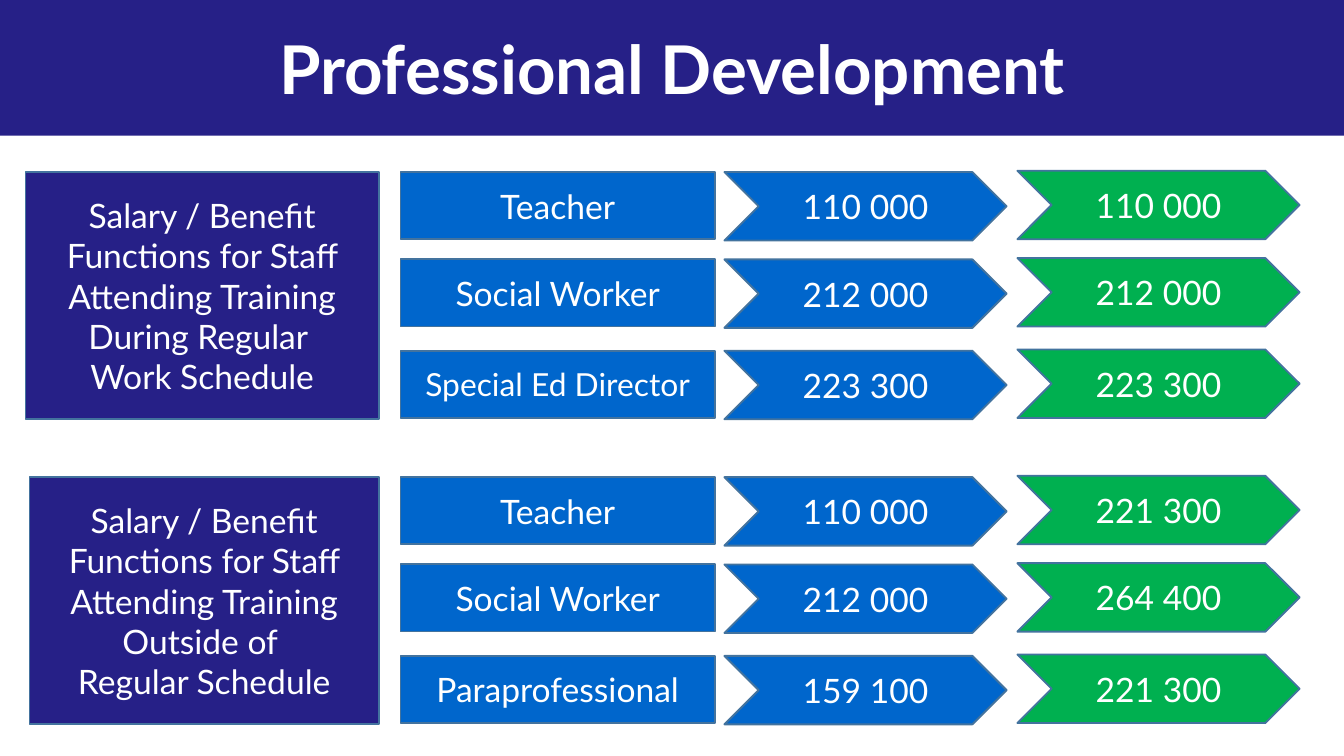
from pptx import Presentation
from pptx.dml.color import RGBColor
from pptx.enum.shapes import MSO_SHAPE
from pptx.enum.text import MSO_ANCHOR, MSO_AUTO_SIZE, PP_ALIGN
from pptx.util import Inches, Pt

RECT, CHEVRON = MSO_SHAPE.RECTANGLE, MSO_SHAPE.CHEVRON
MIDDLE, CENTER = MSO_ANCHOR.MIDDLE, PP_ALIGN.CENTER
NO_FIT = MSO_AUTO_SIZE.NONE

FONT = "Lato"
NAVY, BLUE, GREEN = "262087", "0066CC", "00B050"
WHITE, OUTLINE = "FFFFFF", "43739E"

# Grid in inches: columns, and rows within a group
ROLE_X, ROLE_W, ROLE_H = 2.98, 2.34, 0.5
CODE_X, CODE_STEP, CODE_W, CODE_H = 5.39, 2.18, 2.1, 0.51
GROUP_RIGHT, GROUP_H = 2.82, 1.84
ROW_OFFSETS = (0, 0.65, 1.33)
GREEN_LIFT = 0.01

# Group: top, left, heading, rows of (role, regular code, training code)
GROUPS = [
    (1.28, 0.19,
     "Salary / Benefit Functions for Staff Attending Training "
     "During Regular \vWork Schedule",
     [("Teacher", "110 000", "110 000"),
      ("Social Worker", "212 000", "212 000"),
      ("Special Ed Director", "223 300", "223 300")]),
    (3.55, 0.22,
     "Salary / Benefit Functions for Staff Attending Training "
     "Outside of \vRegular Schedule",
     [("Teacher", "110 000", "221 300"),
      ("Social Worker", "212 000", "264 400"),
      ("Paraprofessional", "159 100", "221 300")]),
]


def rgb(color):
    return RGBColor.from_string(color)


def fill(shape, color):
    shape.fill.solid()
    shape.fill.fore_color.rgb = rgb(color)


def write(shape, text, size, bold=False):
    tf = shape.text_frame
    tf.text = text
    tf.word_wrap = True
    tf.auto_size = NO_FIT
    tf.vertical_anchor = MIDDLE
    p = tf.paragraphs[0]
    p.alignment = CENTER
    for r in p.runs:
        r.font.name = FONT
        r.font.size = Pt(size)
        r.font.bold = bold
        r.font.color.rgb = rgb(WHITE)


def add_box(s, kind, x, y, w, h, color, text, size=18):
    box = s.shapes.add_shape(kind, Inches(x), Inches(y), Inches(w), Inches(h))
    box.shadow.inherit = False
    fill(box, color)
    box.line.color.rgb = rgb(OUTLINE)
    box.line.width = Pt(1)
    write(box, text, size)


def add_title(s, text, width):
    title = s.shapes.title
    title.left, title.top = 0, 0
    title.width, title.height = width, Inches(1.01)
    fill(title, NAVY)
    write(title, text, 36, bold=True)


def add_group(s, top, left, heading, rows):
    add_box(s, RECT, left, top, GROUP_RIGHT - left, GROUP_H, NAVY, heading)
    for offset, (role, regular, training) in zip(ROW_OFFSETS, rows):
        y = top + offset
        # The longest role name is set slightly smaller to fit on one line
        size = 17 if len(role) > 16 else 18
        add_box(s, RECT, ROLE_X, y, ROLE_W, ROLE_H, BLUE, role, size)
        add_box(s, CHEVRON, CODE_X, y, CODE_W, CODE_H, BLUE, regular)
        add_box(s, CHEVRON, CODE_X + CODE_STEP, y - GREEN_LIFT,
                CODE_W, CODE_H, GREEN, training)


def main():
    prs = Presentation()
    # Widescreen, 16:9
    prs.slide_width = Inches(10)
    prs.slide_height = prs.slide_width * 9 // 16
    s = prs.slides.add_slide(prs.slide_layouts[5])

    # Title band
    add_title(s, "Professional Development", prs.slide_width)

    # One block for each kind of schedule
    for group in GROUPS:
        add_group(s, *group)

    prs.save("out.pptx")


if __name__ == "__main__":
    main()
